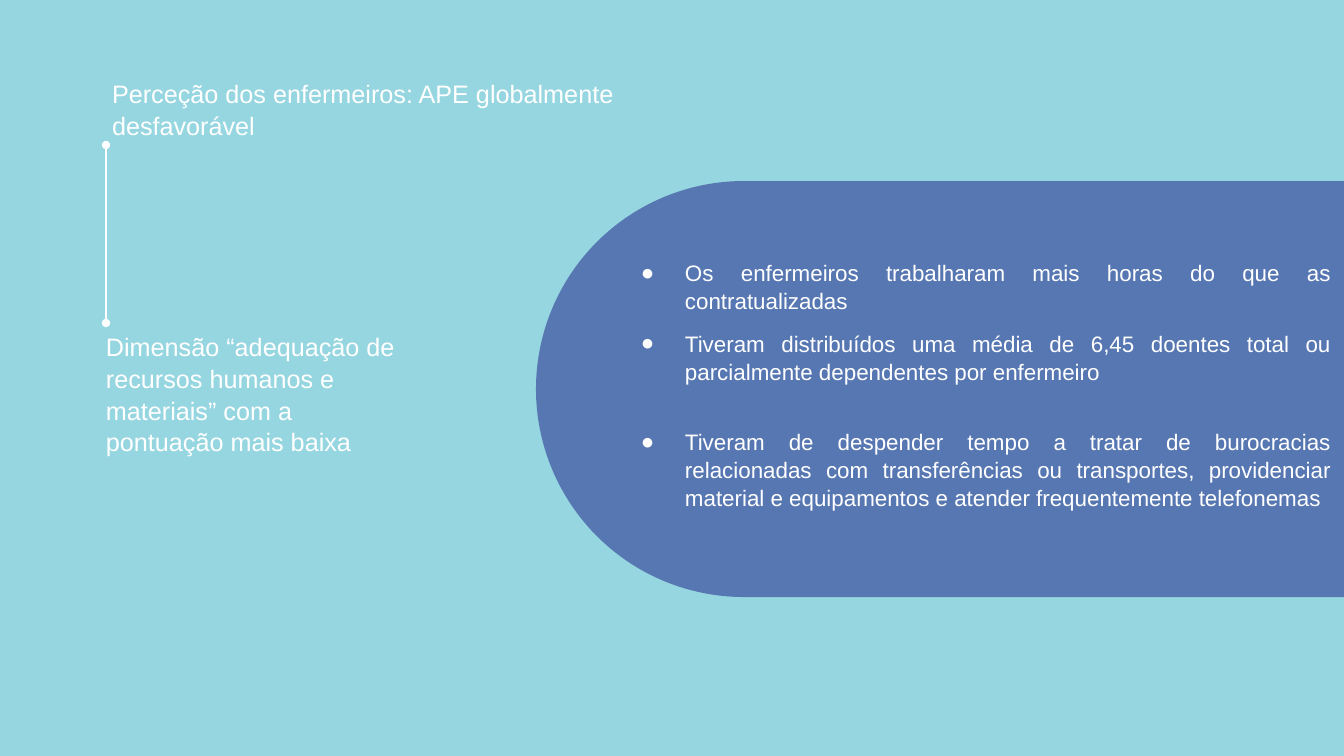
import pptx
import pptx.util
import pptx.dml.color
import pptx.enum.shapes
import pptx.enum.text
import pptx.oxml
import pptx.oxml.ns
import lxml.etree

COLORS = {"sky": "96D6E0", "panel": "5777B2", "white": "FFFFFF"}
FONT = "Arial"
INSET = 13
ALIGN = pptx.enum.text.PP_ALIGN
FINDINGS = [
    ("Os enfermeiros trabalharam mais horas do que as contratualizadas", 0),
    ("Tiveram distribuídos uma média de 6,45 doentes total ou "
     "parcialmente dependentes por enfermeiro", 10),
    ("Tiveram de despender tempo a tratar de burocracias relacionadas com "
     "transferências ou transportes, providenciar material e equipamentos e "
     "atender frequentemente telefonemas", 30),
]


def px(length):
    """Turn a length in px into EMU."""
    return pptx.util.Emu(round(length * 914400 / 100.8))


def color(name):
    """Look up a palette colour."""
    return pptx.dml.color.RGBColor.from_string(COLORS[name])


def child(parent, tag, **attributes):
    """Append a DrawingML element to its parent."""
    return lxml.etree.SubElement(parent, pptx.oxml.ns.qn(tag), attributes)


def place(holder, box):
    """Move a text holder to its box and set up its frame."""
    holder.left, holder.top, holder.width, holder.height = map(px, box)
    frame = holder.text_frame
    frame.word_wrap = True
    frame.auto_size = pptx.enum.text.MSO_AUTO_SIZE.NONE
    frame.vertical_anchor = pptx.enum.text.MSO_ANCHOR.TOP
    frame.margin_left = frame.margin_right = px(INSET)
    frame.margin_top = frame.margin_bottom = px(INSET)
    return frame


def write(paragraph, text, size=18, align=ALIGN.LEFT, before=0, bullet=None):
    """Write one formatted paragraph, with a hanging bullet if given."""
    paragraph.alignment = align
    paragraph.line_spacing = 1.05
    paragraph.space_before = pptx.util.Pt(before)
    run = paragraph.add_run()
    run.text = text
    run.font.name = FONT
    run.font.size = pptx.util.Pt(size)
    run.font.color.rgb = color("white")
    if bullet:
        properties = paragraph._p.get_or_add_pPr()
        properties.set("marL", str(px(67)))
        properties.set("indent", str(px(-44)))
        child(child(properties, "a:buClr"), "a:srgbClr", val=COLORS["white"])
        child(properties, "a:buFont", typeface=FONT)
        child(properties, "a:buChar", char=bullet)


def add_findings(slide, box):
    """Draw the rounded panel behind the list of findings."""
    left, top, width, height = box
    panel = slide.shapes.add_shape(
        pptx.enum.shapes.MSO_SHAPE.ROUNDED_RECTANGLE, *map(px, box))
    panel.adjustments[0] = 0.5
    panel.shadow.inherit = False
    panel.fill.solid()
    panel.fill.fore_color.rgb = color("panel")
    panel.line.fill.background()
    slide.shapes._spTree.insert(2, panel._element)

    findings = place(slide.placeholders[1],
                     (left + 69, top + 64, 739, height - 64))
    for index, (text, before) in enumerate(FINDINGS):
        paragraph = findings.add_paragraph() if index else findings.paragraphs[0]
        write(paragraph, text, size=16, align=ALIGN.JUSTIFY,
              before=before, bullet="●")


def add_perception(slide, box):
    """Place the title, the dimension below it and the line joining them."""
    left, top, width, height = box
    title = place(slide.shapes.title, (left + 6, top, width - 6, 87))
    write(title.paragraphs[0],
          "Perceção dos enfermeiros: APE globalmente desfavorável")

    dimension_box = (left, top + 253, 315, height - 253)
    dimension = place(slide.shapes.add_textbox(*map(px, dimension_box)),
                      dimension_box)
    write(dimension.paragraphs[0],
          "Dimensão “adequação de recursos humanos e materiais” "
          "com a pontuação mais baixa")

    link_x = px(left + INSET)
    link = slide.shapes.add_connector(
        pptx.enum.shapes.MSO_CONNECTOR.STRAIGHT,
        link_x, px(top + 259), link_x, px(top + 81))
    link.line.color.rgb = color("white")
    link.line.width = pptx.util.Pt(1.5)
    outline = link.line._get_or_add_ln()
    child(outline, "a:headEnd", type="oval")
    child(outline, "a:tailEnd", type="oval")
    child(link._element.spPr, "a:effectLst")


def main():
    """Build and save the slide."""
    deck = pptx.Presentation()
    deck.slide_width, deck.slide_height = px(1344), px(756)
    slide = deck.slides.add_slide(deck.slide_layouts[1])
    slide.background.fill.solid()
    slide.background.fill.fore_color.rgb = color("sky")
    add_findings(slide, (536, 181, 1039, 416))
    add_perception(slide, (93, 64, 587, 385))
    deck.save("out.pptx")


if __name__ == "__main__":
    main()
